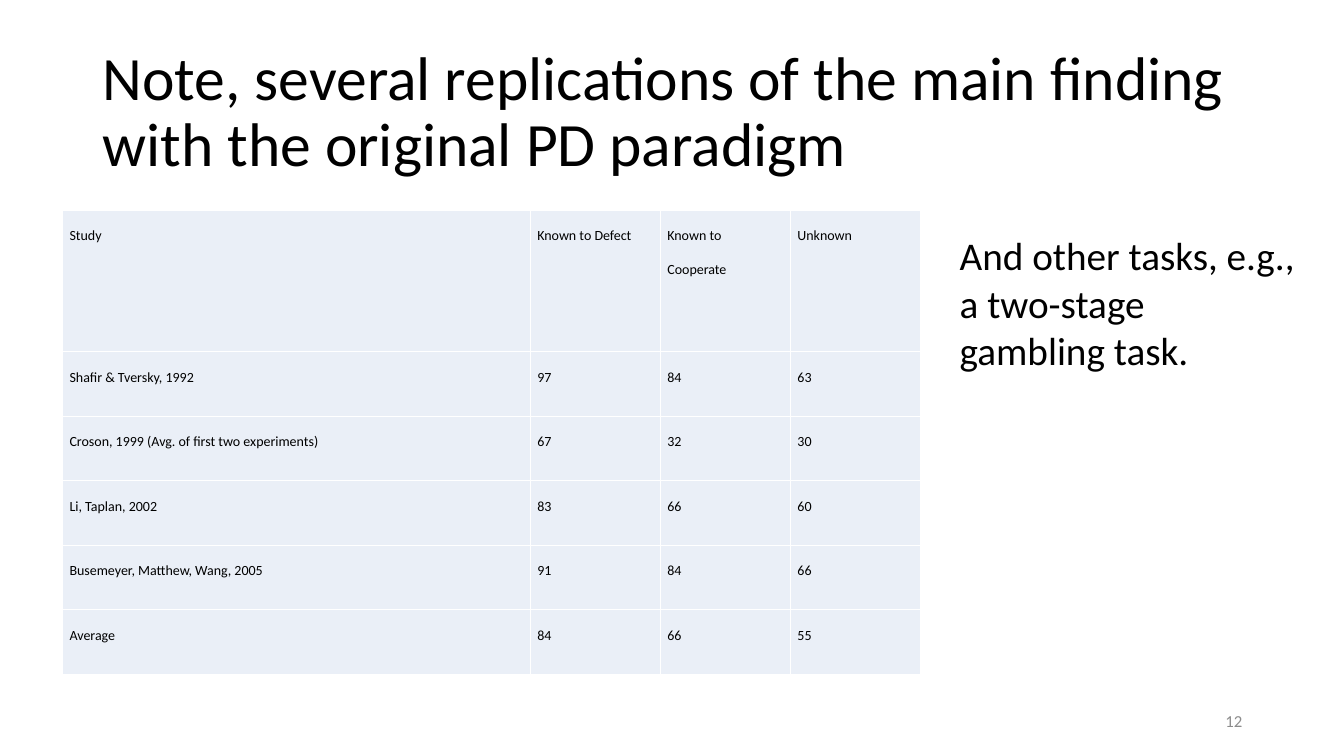
"""Build a slide that tabulates replications of the prisoner's dilemma finding."""
import pptx
import pptx.dml.color
import pptx.enum.text
import pptx.oxml
import pptx.oxml.ns
import pptx.util
from pptx.util import Inches, Pt

TITLE = ["Note, several replications of the main finding with the original PD paradigm"]
ASIDE = ["And other tasks, e.g.,", "a two-stage", "gambling task."]
NUMBER = ["12"]
STUDIES = [
    ("Study", "Known to Defect", "Known to Cooperate", "Unknown"),
    ("Shafir & Tversky, 1992", "97", "84", "63"),
    ("Croson, 1999 (Avg. of first two experiments)", "67", "32", "30"),
    ("Li, Taplan, 2002", "83", "66", "60"),
    ("Busemeyer, Matthew, Wang, 2005", "91", "84", "66"),
    ("Average", "84", "66", "55"),
]
WIDTHS = [4.64, 1.29, 1.29, 1.29]
HEIGHTS = [1.4] + [0.64] * 5
COLORS = {"ink": "000000", "gray": "8C8C8C", "cell": "EAEFF7", "rule": "FFFFFF"}
FONT = "Calibri"
ALIGN = pptx.enum.text.PP_ALIGN
ANCHOR = pptx.enum.text.MSO_ANCHOR


def rgb(name):
    return pptx.dml.color.RGBColor.from_string(COLORS[name])


def style(para, size, color="ink", align=ALIGN.LEFT, space=1.0):
    para.font.name = FONT
    para.font.size = Pt(size)
    para.font.color.rgb = rgb(color)
    para.alignment = align
    para.line_spacing = space


def add_text(slide, box, lines, size, anchor=ANCHOR.TOP, wrap=True, **look):
    frame = slide.shapes.add_textbox(*map(Inches, box)).text_frame
    frame.word_wrap = wrap
    frame.vertical_anchor = anchor
    frame.text = "\n".join(lines)
    for para in frame.paragraphs:
        style(para, size, **look)
    return frame


def add_rules(cell):
    props = cell._tc.get_or_add_tcPr()
    for side in ("lnL", "lnR", "lnT", "lnB"):
        props.append(pptx.oxml.parse_xml(
            f'<a:{side} {pptx.oxml.ns.nsdecls("a")} w="12700"><a:solidFill>'
            f'<a:srgbClr val="{COLORS["rule"]}"/></a:solidFill></a:{side}>'))


def fill_cell(cell, text, align):
    cell.margin_left = cell.margin_right = Inches(0.07)
    cell.margin_top = cell.margin_bottom = 0
    cell.text = text
    style(cell.text_frame.paragraphs[0], 10, align=align, space=2.0)
    add_rules(cell)
    cell.fill.solid()
    cell.fill.fore_color.rgb = rgb("cell")


def add_grid(slide):
    box = (0.62, 2.09, sum(WIDTHS), sum(HEIGHTS))
    table = slide.shapes.add_table(len(HEIGHTS), len(WIDTHS), *map(Inches, box)).table
    for col, width in zip(table.columns, WIDTHS):
        col.width = Inches(width)
    for row, height, study in zip(table.rows, HEIGHTS, STUDIES):
        row.height = Inches(height)
        for cell, text in zip(row.cells, study):
            single = text.isdigit() or text in ("Study", "Unknown")
            fill_cell(cell, text, ALIGN.JUSTIFY if single else ALIGN.LEFT)


def main():
    deck = pptx.Presentation()
    deck.slide_width, deck.slide_height = Inches(13.33), Inches(7.5)
    slide = deck.slides.add_slide(deck.slide_layouts[6])
    add_text(slide, (0.92, 0.4, 11.5, 1.45), TITLE, 44, ANCHOR.MIDDLE, space=0.9)
    add_grid(slide)
    add_text(slide, (9.42, 6.95, 3, 0.4), NUMBER, 12, ANCHOR.MIDDLE,
             color="gray", align=ALIGN.RIGHT)
    aside = add_text(slide, (9.42, 2.25, 3.65, 1.51), ASIDE, 28, wrap=False)
    aside.auto_size = pptx.enum.text.MSO_AUTO_SIZE.SHAPE_TO_FIT_TEXT
    deck.save("out.pptx")


if __name__ == "__main__":
    main()
